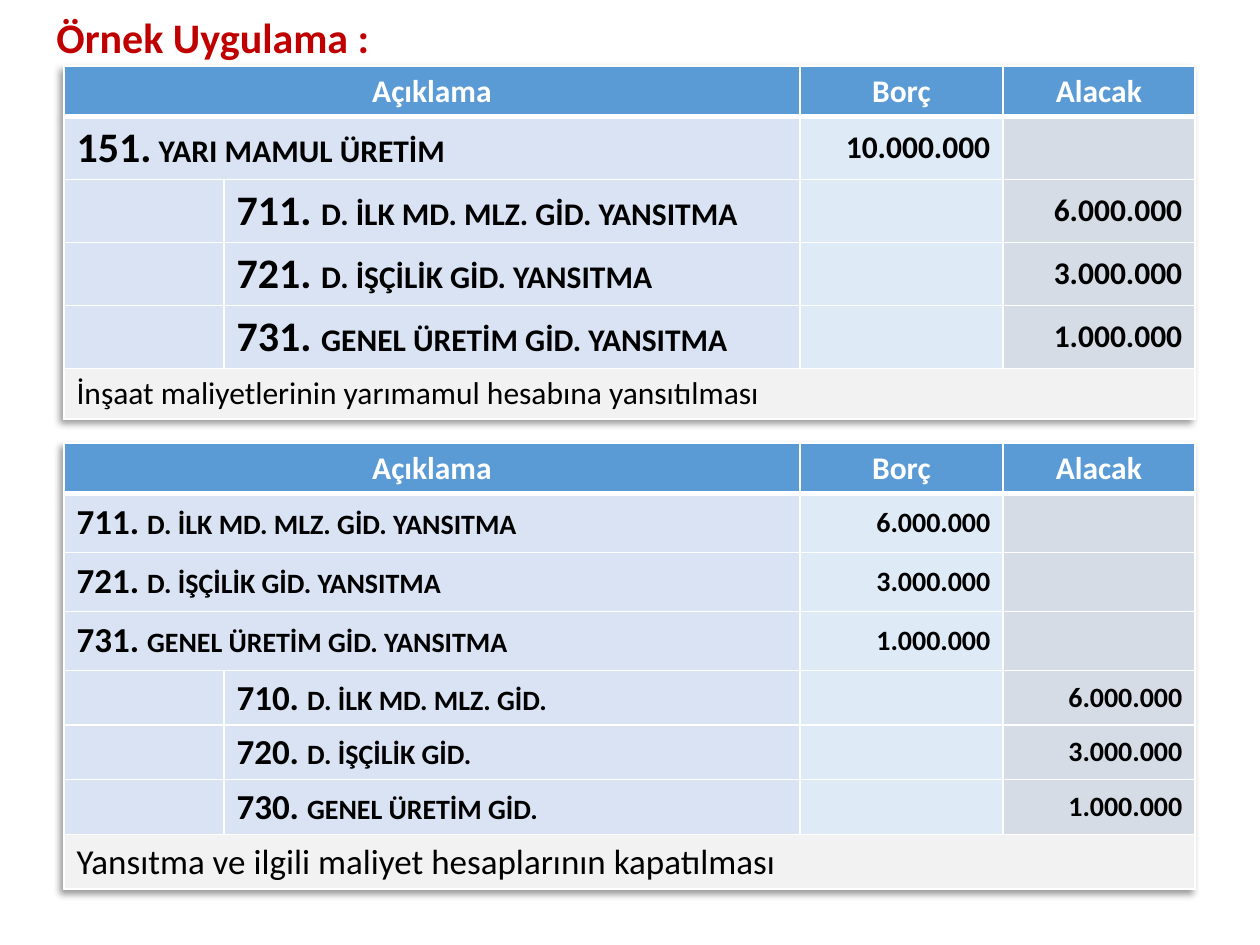
from lxml.etree import SubElement, fromstring
from pptx import Presentation
from pptx.dml.color import RGBColor
from pptx.enum.text import MSO_ANCHOR, PP_ALIGN
from pptx.oxml.ns import nsdecls, qn
from pptx.util import Emu, Pt

PX = 914400 / 126
FONT = "Calibri"
RED = RGBColor(0xC0, 0x00, 0x00)
BLACK = RGBColor(0x00, 0x00, 0x00)
WHITE = RGBColor(0xFF, 0xFF, 0xFF)
HEADER_BLUE = RGBColor(0x5B, 0x9B, 0xD5)
ACCOUNT_BLUE = RGBColor(0xDA, 0xE3, 0xF3)
DEBIT_BLUE = RGBColor(0xDE, 0xEB, 0xF7)
CREDIT_GREY = RGBColor(0xD6, 0xDC, 0xE5)
NOTE_GREY = RGBColor(0xF2, 0xF2, 0xF2)

COLUMN_WIDTHS = [160, 576, 203, 192]
COLUMN_FILLS = [ACCOUNT_BLUE, ACCOUNT_BLUE, DEBIT_BLUE, CREDIT_GREY]
DEBIT, CREDIT = 2, 3
SHADOW = (
    f'<a:effectLst {nsdecls("a")}><a:outerShdw blurRad="50800" dist="38100" '
    'dir="8100000" algn="tr" rotWithShape="0"><a:prstClr val="black">'
    '<a:alpha val="40000"/></a:prstClr></a:outerShdw></a:effectLst>'
)


def px(length):
    return Emu(round(length * PX))


class JournalSlide:
    def __init__(self, presentation):
        self.slide = presentation.slides.add_slide(presentation.slide_layouts[6])

    def add_text(self, paragraph, text, size, color=BLACK, bold=True):
        run = paragraph.add_run()
        run.text = text
        run.font.name = FONT
        run.font.size = Pt(size)
        run.font.bold = bold
        run.font.color.rgb = color

    def title(self, text, left, top, width, height):
        frame = self.slide.shapes.add_textbox(
            px(left), px(top), px(width), px(height)).text_frame
        frame.word_wrap = True
        frame.vertical_anchor = MSO_ANCHOR.MIDDLE
        frame.paragraphs[0].line_spacing = 0.9
        self.add_text(frame.paragraphs[0], text, 24, RED)

    def border(self, cell, side, points):
        line = SubElement(cell._tc.get_or_add_tcPr(), qn(f"a:ln{side}"), w=str(Pt(points)))
        fill = SubElement(line, qn("a:solidFill"))
        SubElement(fill, qn("a:srgbClr"), val=str(WHITE))

    def style_cell(self, cell, row, fill):
        thick_side = {0: "B", 1: "T"}.get(row)
        for side in "LRTB":
            self.border(cell, side, 3 if side == thick_side else 1)
        cell.fill.solid()
        cell.fill.fore_color.rgb = fill
        cell.vertical_anchor = MSO_ANCHOR.MIDDLE

    def fill_cell(self, cell, runs, align=PP_ALIGN.LEFT, color=BLACK, bold=True):
        paragraph = cell.text_frame.paragraphs[0]
        paragraph.alignment = align
        for text, size in runs:
            self.add_text(paragraph, text, size, color, bold)

    def journal(self, left, top, heights, entries, code_size, name_size, note, note_size):
        table = self.slide.shapes.add_table(
            len(heights), len(COLUMN_WIDTHS), px(left), px(top),
            px(sum(COLUMN_WIDTHS)), px(sum(heights))).table
        table.horz_banding = False
        table._tbl.tblPr.insert(0, fromstring(SHADOW))
        for column, width in zip(table.columns, COLUMN_WIDTHS):
            column.width = px(width)
        last = len(heights) - 1
        row_fills = {0: [HEADER_BLUE] * 4, last: [NOTE_GREY] * 4}
        for row, height in enumerate(heights):
            table.rows[row].height = px(height)
            for column, fill in enumerate(row_fills.get(row, COLUMN_FILLS)):
                self.style_cell(table.cell(row, column), row, fill)

        table.cell(0, 0).merge(table.cell(0, 1))
        for column, heading in ((0, "Açıklama"), (DEBIT, "Borç"), (CREDIT, "Alacak")):
            self.fill_cell(table.cell(0, column), [(heading, 18)], PP_ALIGN.CENTER, WHITE)

        for row, (side, code, name, amount) in enumerate(entries, 1):
            if side == DEBIT:
                table.cell(row, 0).merge(table.cell(row, 1))
            account = table.cell(row, 0 if side == DEBIT else 1)
            self.fill_cell(account, [(code, code_size), (name, name_size)])
            self.fill_cell(table.cell(row, side), [(amount, name_size)], PP_ALIGN.RIGHT)

        table.cell(last, 0).merge(table.cell(last, 3))
        table.cell(last, 0).vertical_anchor = MSO_ANCHOR.TOP
        self.fill_cell(table.cell(last, 0), [(note, note_size)], bold=False)


def main():
    presentation = Presentation()
    presentation.slide_width = px(1260)
    presentation.slide_height = px(945)
    page = JournalSlide(presentation)
    page.title("Örnek Uygulama :", 44, 16, 1134, 48)

    reflections = [
        ("711. ", "D. İLK MD. MLZ. GİD. YANSITMA", "6.000.000"),
        ("721. ", "D. İŞÇİLİK GİD. YANSITMA", "3.000.000"),
        ("731. ", "GENEL ÜRETİM GİD. YANSITMA", "1.000.000"),
    ]
    production = [(DEBIT, "151.", " YARI MAMUL ÜRETİM", "10.000.000")]
    production += [(CREDIT, *account) for account in reflections]
    page.journal(64, 66, [42] + [52] * 4 + [42], production, 24, 18,
                 "İnşaat maliyetlerinin yarımamul hesabına yansıtılması", 18)

    closing = [(DEBIT, *account) for account in reflections]
    closing += [
        (CREDIT, "710. ", "D. İLK MD. MLZ. GİD.", "6.000.000"),
        (CREDIT, "720. ", "D. İŞÇİLİK GİD.", "3.000.000"),
        (CREDIT, "730. ", "GENEL ÜRETİM GİD.", "1.000.000"),
    ]
    page.journal(64, 443, [39] + [59] * 3 + [49] * 4, closing, 20, 16,
                 "Yansıtma ve ilgili maliyet hesaplarının kapatılması", 20)
    presentation.save("out.pptx")


if __name__ == "__main__":
    main()
